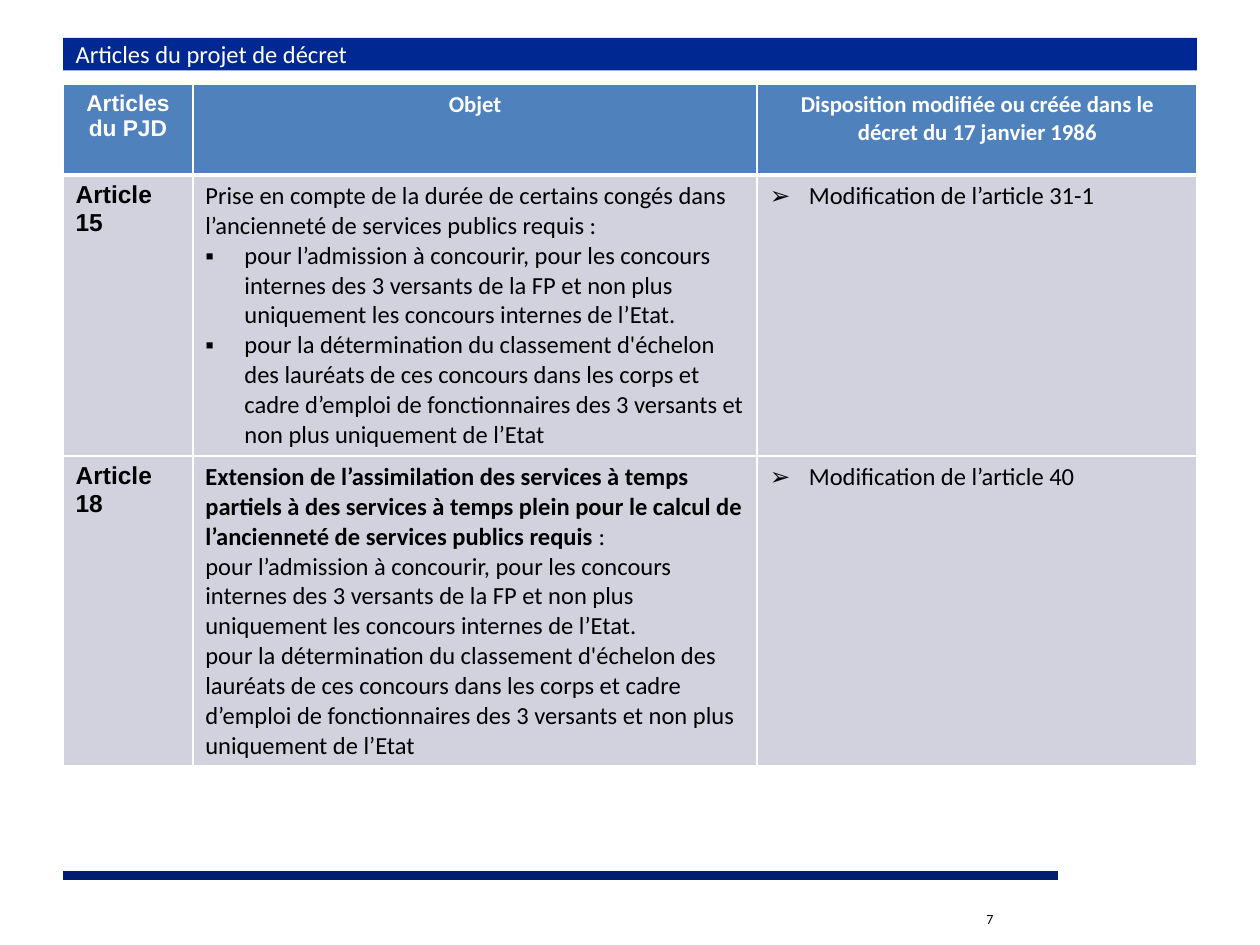
"""Build the slide listing the articles of the draft decree."""
from lxml.etree import SubElement
from pptx import Presentation
from pptx.dml.color import RGBColor
from pptx.enum.shapes import MSO_CONNECTOR as CONNECTOR
from pptx.enum.text import MSO_ANCHOR as ANCHOR, MSO_AUTO_SIZE as AUTO_SIZE, PP_ALIGN as ALIGN
from pptx.oxml import parse_xml
from pptx.oxml.ns import nsdecls, qn
from pptx.util import Inches, Pt

WHITE = RGBColor(0xFF, 0xFF, 0xFF)
BLACK = RGBColor(0x00, 0x00, 0x00)
TITLE_BLUE = RGBColor(0x00, 0x28, 0x92)
RULE_BLUE = RGBColor(0x00, 0x1D, 0x72)
HEADER_BLUE = RGBColor(0x4F, 0x81, 0xBD)
BODY_GREY = RGBColor(0xD1, 0xD2, 0xDE)

TITLE = "Articles du projet de décret"
PAGE_NUMBER = "7"
HEADERS = ["Articles du PJD", "Objet", "Disposition modifiée ou créée dans le décret du 17 janvier 1986"]
ADMISSION = ("pour l’admission à concourir, pour les concours internes des 3 versants de la FP "
             "et non plus uniquement les concours internes de l’Etat.")
RANKING = ("pour la détermination du classement d'échelon des lauréats de ces concours dans les corps "
           "et cadre d’emploi de fonctionnaires des 3 versants et non plus uniquement de l’Etat")
SERVICE_LEAVE = ("Prise en compte de la durée de certains congés dans l’ancienneté "
                 "de services publics requis :")
PART_TIME = ("Extension de l’assimilation des services à temps partiels à des services à temps plein "
             "pour le calcul de l’ancienneté de services publics requis ")

# Each cell is a list of (bullet, [(text, bold), ...]) paragraphs.
ROWS = [
    [
        [("", [("Article 15", True)])],
        [("", [(SERVICE_LEAVE, False)]), ("▪", [(ADMISSION, False)]), ("▪", [(RANKING, False)])],
        [("➢", [("Modification de l’article 31-1", False)])],
    ],
    [
        [("", [("Article 18", True)])],
        [("", [(PART_TIME, True), (":", False)]), ("", [(ADMISSION, False)]), ("", [(RANKING, False)])],
        [("➢", [("Modification de l’article 40", False)])],
    ],
]
COLUMN_WIDTHS = [1.03, 4.48, 3.49]
ROW_HEIGHTS = [0.72, 2.23, 2.46]
COLUMN_FONTS = ["Arial", "Calibri", "Calibri"]


def add_run(paragraph, text, size, color, font="Calibri", bold=False):
    run = paragraph.add_run()
    run.text = text
    run.font.name = font
    run.font.size = Pt(size)
    run.font.bold = bold
    run.font.color.rgb = color


def set_bullet(paragraph, character):
    properties = paragraph._p.get_or_add_pPr()
    properties.set("marL", str(Inches(0.31)))
    properties.set("indent", str(-Inches(0.31)))
    SubElement(properties, qn("a:buFont"), typeface="Arial")
    SubElement(properties, qn("a:buChar"), char=character)


def format_cell(cell, fill, top=1, bottom=1):
    cell.fill.solid()
    cell.fill.fore_color.rgb = fill
    properties = cell._tc.get_or_add_tcPr()
    for index, (side, width) in enumerate([("L", 1), ("R", 1), ("T", top), ("B", bottom)]):
        properties.insert(index, parse_xml(
            f'<a:ln{side} {nsdecls("a")} w="{Pt(width)}"><a:solidFill>'
            f'<a:srgbClr val="{WHITE}"/></a:solidFill></a:ln{side}>'))


def add_title(slide):
    title = slide.shapes.title
    title.left, title.top, title.width, title.height = map(Inches, (0.5, 0.3, 9, 0.26))
    title.fill.solid()
    title.fill.fore_color.rgb = TITLE_BLUE
    frame = title.text_frame
    frame.auto_size = AUTO_SIZE.NONE
    frame.vertical_anchor = ANCHOR.MIDDLE
    paragraph = frame.paragraphs[0]
    paragraph.alignment = ALIGN.LEFT
    add_run(paragraph, TITLE, 14, WHITE)


def add_articles_table(slide):
    table = slide.shapes.add_table(
        len(ROW_HEIGHTS), len(COLUMN_WIDTHS), Inches(0.5), Inches(0.67),
        Inches(sum(COLUMN_WIDTHS)), Inches(sum(ROW_HEIGHTS))).table
    for column, width in zip(table.columns, COLUMN_WIDTHS):
        column.width = Inches(width)
    for row, height in zip(table.rows, ROW_HEIGHTS):
        row.height = Inches(height)

    for column, (text, font) in enumerate(zip(HEADERS, COLUMN_FONTS)):
        cell = table.cell(0, column)
        format_cell(cell, HEADER_BLUE, bottom=3)
        paragraph = cell.text_frame.paragraphs[0]
        paragraph.alignment = ALIGN.CENTER
        add_run(paragraph, text, 13, WHITE, font, True)

    for row, contents in enumerate(ROWS, start=1):
        for column, paragraphs in enumerate(contents):
            cell = table.cell(row, column)
            format_cell(cell, BODY_GREY, top=3 if row == 1 else 1)
            frame = cell.text_frame
            for index, (bullet, runs) in enumerate(paragraphs):
                paragraph = frame.add_paragraph() if index else frame.paragraphs[0]
                if bullet:
                    set_bullet(paragraph, bullet)
                for text, bold in runs:
                    add_run(paragraph, text, 14, BLACK, COLUMN_FONTS[column], bold)


def add_footer(slide):
    rule = slide.shapes.add_connector(
        CONNECTOR.STRAIGHT, Inches(8.4), Inches(6.95), Inches(0.5), Inches(6.95))
    rule.line.color.rgb = RULE_BLUE
    rule.line.width = Pt(5)
    SubElement(rule._element.spPr, qn("a:effectLst"))
    number = slide.shapes.add_textbox(Inches(7.73), Inches(7.18), Inches(2.26), Inches(0.3))
    number.text_frame.word_wrap = True
    add_run(number.text_frame.paragraphs[0], PAGE_NUMBER, 8, BLACK)


def main():
    presentation = Presentation()
    presentation.slide_width, presentation.slide_height = Inches(10), Inches(7.5)
    slide = presentation.slides.add_slide(presentation.slide_layouts[5])
    add_footer(slide)
    add_title(slide)
    add_articles_table(slide)
    presentation.save("out.pptx")


if __name__ == "__main__":
    main()
